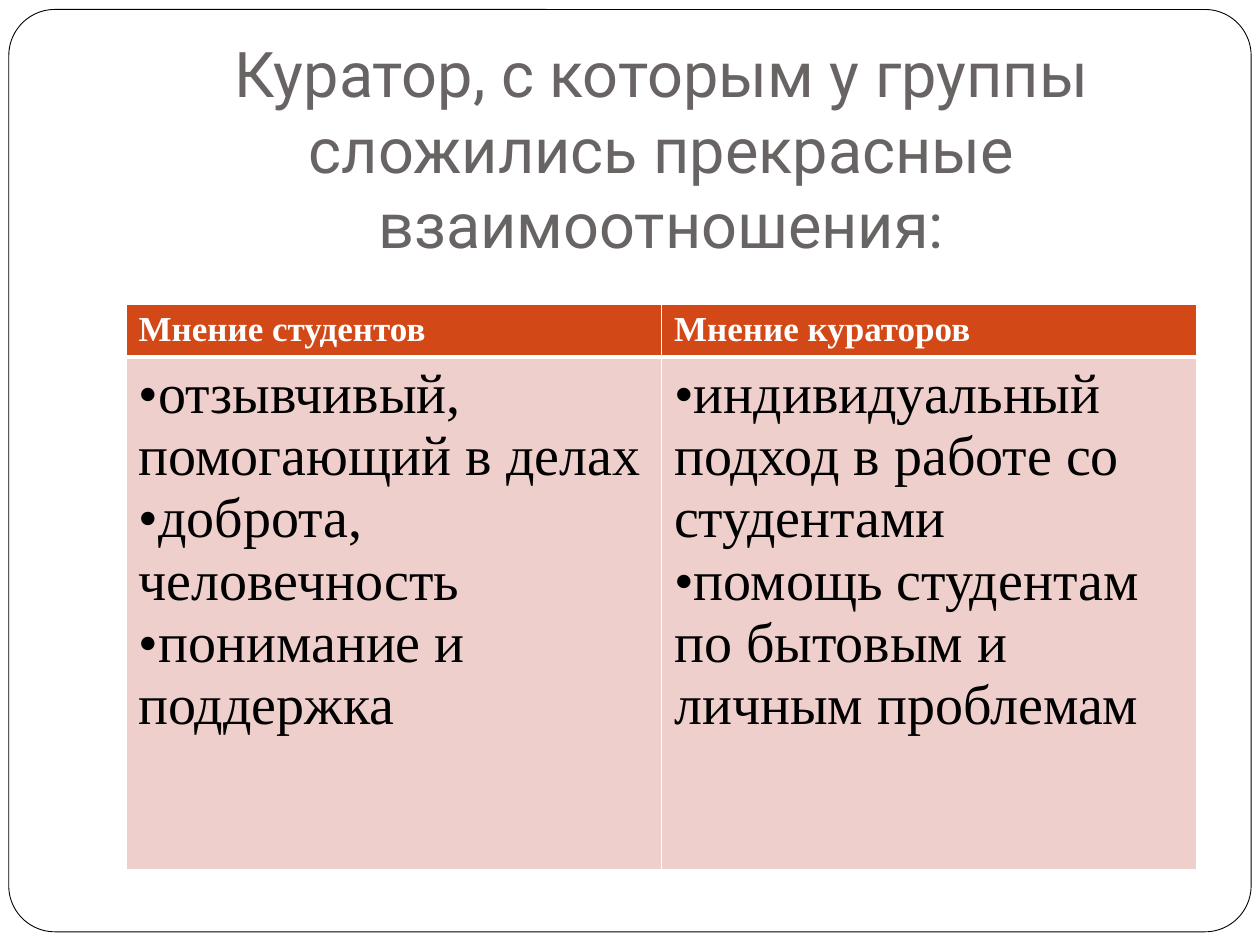
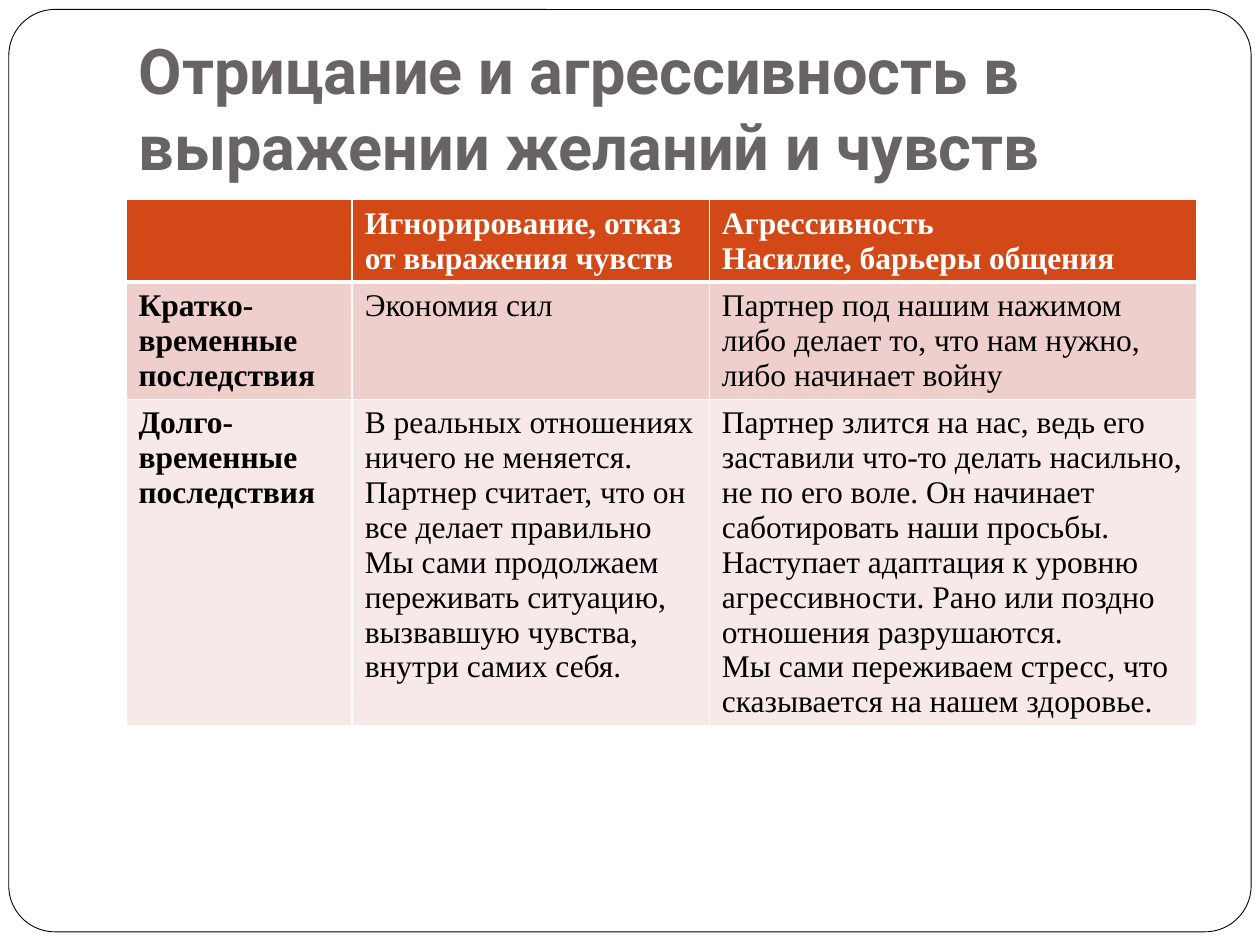
from lxml import etree
from pptx import Presentation, util as u
from pptx.dml.color import RGBColor
from pptx.enum import shapes, text
from pptx.oxml.ns import qn

# Shared style
COLUMNS, ROWS = 20, 15
LEFT, WIDTH = 2, 17
TITLE_FONT, BODY_FONT = "Roboto", "Times New Roman"
WHITE, BLACK, GREY = "FFFFFF", "000000", "696464"
HEADER, BAND_DARK, BAND_LIGHT = "D34817", "EFCFCC", "F7E9E8"


def color(hex_code):
    return RGBColor.from_string(hex_code)


class Deck:
    def __init__(self):
        self.prs = Presentation()
        self.prs.slide_width, self.prs.slide_height = u.Inches(10), u.Inches(7.5)
        self.slide = None

    def x(self, columns):
        return round(self.prs.slide_width * columns / COLUMNS)

    def y(self, rows):
        return round(self.prs.slide_height * rows / ROWS)

    def box(self, left, top, width, height):
        return self.x(left), self.y(top), self.x(width), self.y(height)

    def new_slide(self):
        self.slide = self.prs.slides.add_slide(self.prs.slide_layouts[5])
        self.frame()

    def frame(self):
        frame = self.slide.shapes.add_shape(
            shapes.MSO_SHAPE.ROUNDED_RECTANGLE, *self.box(0.14, 0.15, 19.72, 14.64))
        frame.adjustments[0] = 0.05
        frame.shadow.inherit = False
        frame.fill.solid()
        frame.fill.fore_color.rgb = color(WHITE)
        frame.line.color.rgb = color(BLACK)
        frame.line.width = u.Pt(0.5)
        # Send the frame behind the title
        self.slide.shapes._spTree.insert(2, frame._element)

    def run(self, paragraph, words, font, size, hex_code, bold):
        run = paragraph.add_run()
        run.text = words
        run.font.name, run.font.size, run.font.bold = font, u.Pt(size), bold
        run.font.color.rgb = color(hex_code)

    def title(self, words, height, align=text.PP_ALIGN.LEFT, bold=False):
        title = self.slide.shapes.title
        title.left, title.top, title.width, title.height = self.box(
            LEFT, 0.6, WIDTH, height)
        body = title.text_frame
        body.word_wrap, body.auto_size = True, text.MSO_AUTO_SIZE.NONE
        body.vertical_anchor = text.MSO_ANCHOR.BOTTOM
        body.margin_left = body.margin_right = body.margin_bottom = u.Inches(0.1)
        body.margin_top = u.Inches(0.05)
        body.paragraphs[0].alignment = align
        self.run(body.paragraphs[0], words, TITLE_FONT, 36, GREY, bold)

    def bullet(self, paragraph):
        props = paragraph._p.get_or_add_pPr()
        etree.SubElement(props, qn("a:buFont"), typeface=BODY_FONT)
        etree.SubElement(props, qn("a:buChar"), char="•")

    def borders(self, cell, row):
        props = cell._tc.get_or_add_tcPr()
        # A thick rule parts the header from the body
        widths = {"L": 1, "R": 1, "T": 3 if row == 1 else 1, "B": 3 if row == 0 else 1}
        for side, width in widths.items():
            line = etree.SubElement(props, qn(f"a:ln{side}"), w=str(u.Pt(width)))
            fill = etree.SubElement(line, qn("a:solidFill"))
            etree.SubElement(fill, qn("a:srgbClr"), val=WHITE)

    def table(self, top, widths, heights, content, header_size, body_size,
              bullets=False, row_heads=False):
        table = self.slide.shapes.add_table(
            len(heights), len(widths), *self.box(LEFT, top, WIDTH, sum(heights))).table
        for column, width in zip(table.columns, widths):
            column.width = self.x(width)
        for row, height in zip(table.rows, heights):
            row.height = self.y(height)
        for r, line in enumerate(content):
            is_header = r == 0
            band = HEADER if is_header else (BAND_LIGHT, BAND_DARK)[r % 2]
            for c, paragraphs in enumerate(line):
                cell = table.cell(r, c)
                self.borders(cell, r)
                cell.fill.solid()
                cell.fill.fore_color.rgb = color(band)
                for i, words in enumerate(paragraphs):
                    body = cell.text_frame
                    paragraph = body.add_paragraph() if i else body.paragraphs[0]
                    if bullets and not is_header:
                        self.bullet(paragraph)
                    self.run(paragraph, words, BODY_FONT,
                             header_size if is_header else body_size,
                             WHITE if is_header else BLACK,
                             is_header or (row_heads and c == 0))


def main():
    deck = Deck()

    # Slide 1: a curator on good terms with the group
    deck.new_slide()
    deck.title("Куратор, с которым у группы сложились прекрасные взаимоотношения:",
               3.75, text.PP_ALIGN.CENTER)
    opinions = [
        [["Мнение студентов"], ["Мнение кураторов"]],
        [["отзывчивый, помогающий в делах",
          "доброта, человечность",
          "понимание и поддержка"],
         ["индивидуальный подход в работе со студентами",
          "помощь студентам по бытовым и личным проблемам"]],
    ]
    deck.table(4.83, [WIDTH / 2] * 2, [0.84, 8.13], opinions, 20, 32, bullets=True)

    # Slide 2: consequences of denial and aggression
    deck.new_slide()
    deck.title("Отрицание и агрессивность в выражении желаний и чувств", 2.5, bold=True)
    consequences = [
        [[],
         ["Игнорирование, отказ от выражения чувств"],
         ["Агрессивность", "Насилие, барьеры общения"]],
        [["Кратко-временные последствия"],
         ["Экономия сил"],
         ["Партнер под нашим нажимом либо делает то, что нам нужно, "
          "либо начинает войну"]],
        [["Долго-временные последствия"],
         ["В реальных отношениях ничего не меняется. "
          "Партнер считает, что он все делает правильно",
          "Мы сами продолжаем переживать ситуацию, вызвавшую чувства, "
          "внутри самих себя."],
         ["Партнер злится на нас, ведь его заставили что-то делать насильно, "
          "не по его воле. Он начинает саботировать наши просьбы.",
          "Наступает адаптация к уровню агрессивности. "
          "Рано или поздно отношения разрушаются.",
          "Мы сами переживаем стресс, что сказывается на нашем здоровье."]],
    ]
    deck.table(3.17, [3.59, 5.67, 7.74], [0.82] * 3, consequences, 18, 18, row_heads=True)

    deck.prs.save("out.pptx")


if __name__ == "__main__":
    main()
